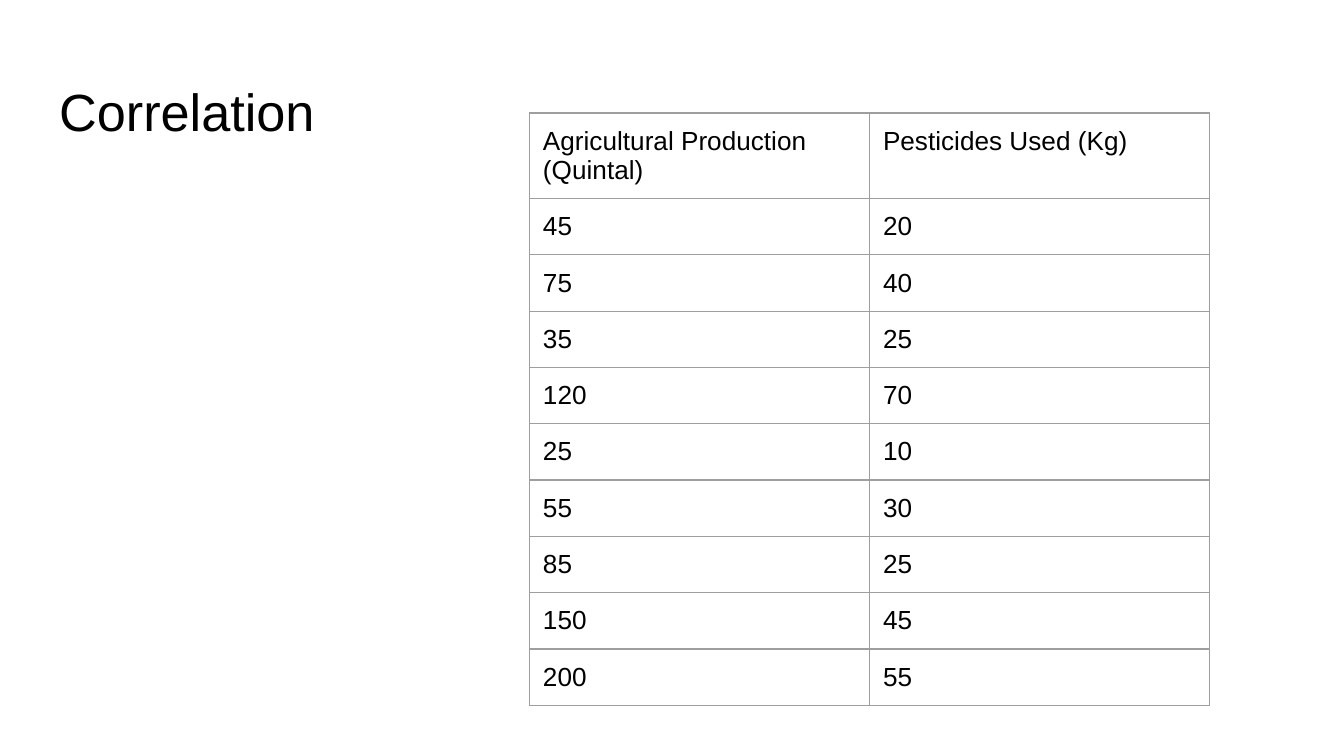
import pptx
import pptx.dml.color
import pptx.enum.text
import pptx.oxml
import pptx.oxml.ns
import pptx.util
from dataclasses import dataclass
from pptx.util import Inches


@dataclass(frozen=True)
class Theme:
    font: str = "Arial"
    text: str = "000000"
    background: str = "FFFFFF"
    border: str = "9E9E9E"
    border_width: float = 0.75
    title_size: int = 28
    table_size: int = 14


theme = Theme()


def write_text(text_frame, text, size):
    paragraph = text_frame.paragraphs[0]
    paragraph.alignment = pptx.enum.text.PP_ALIGN.LEFT
    run = paragraph.add_run()
    run.text = text
    run.font.name = theme.font
    run.font.size = pptx.util.Pt(size)
    run.font.bold = False
    run.font.color.rgb = pptx.dml.color.RGBColor.from_string(theme.text)


def add_borders(cell):
    properties = cell._tc.get_or_add_tcPr()
    width = pptx.util.Pt(theme.border_width)
    for position, side in enumerate(("lnL", "lnR", "lnT", "lnB")):
        border = pptx.oxml.parse_xml(
            f'<a:{side} {pptx.oxml.ns.nsdecls("a")} w="{width}">'
            f'<a:solidFill><a:srgbClr val="{theme.border}"/></a:solidFill>'
            f'<a:prstDash val="solid"/></a:{side}>'
        )
        properties.insert(position, border)


presentation = pptx.Presentation()
presentation.slide_width = Inches(10)
presentation.slide_height = Inches(10 * 9 / 16)
slide = presentation.slides.add_slide(presentation.slide_layouts[5])
slide.background.fill.solid()
slide.background.fill.fore_color.rgb = pptx.dml.color.RGBColor.from_string(theme.background)

title = slide.shapes.title
title.left, title.top = Inches(0.34), Inches(0.49)
title.width, title.height = Inches(9.32), Inches(0.63)
title_frame = title.text_frame
title_frame.margin_left = title_frame.margin_right = Inches(0.1)
title_frame.margin_top = title_frame.margin_bottom = Inches(0.1)
title_frame.vertical_anchor = pptx.enum.text.MSO_ANCHOR.TOP
title_frame.auto_size = pptx.enum.text.MSO_AUTO_SIZE.NONE
title_frame.word_wrap = True
write_text(title_frame, "Correlation", theme.title_size)

table_rows = [
    ("Agricultural Production (Quintal)", "Pesticides Used (Kg)"),
    ("45", "20"),
    ("75", "40"),
    ("35", "25"),
    ("120", "70"),
    ("25", "10"),
    ("55", "30"),
    ("85", "25"),
    ("150", "45"),
    ("200", "55"),
]
column_width = 2.53
header_height = 0.53
row_height = 0.35
table_height = header_height + row_height * (len(table_rows) - 1)
table = slide.shapes.add_table(
    len(table_rows), 2, Inches(3.94), Inches(0.84),
    Inches(column_width * 2), Inches(table_height),
).table
table.first_row = False
table.horz_banding = False
for column in table.columns:
    column.width = Inches(column_width)

for row_index, values in enumerate(table_rows):
    table.rows[row_index].height = Inches(row_height if row_index else header_height)
    for column_index, value in enumerate(values):
        cell = table.cell(row_index, column_index)
        cell.margin_left = cell.margin_right = Inches(0.1)
        cell.margin_top = cell.margin_bottom = Inches(0.1)
        cell.vertical_anchor = pptx.enum.text.MSO_ANCHOR.TOP
        cell.fill.background()
        add_borders(cell)
        write_text(cell.text_frame, value, theme.table_size)

presentation.save("out.pptx")
